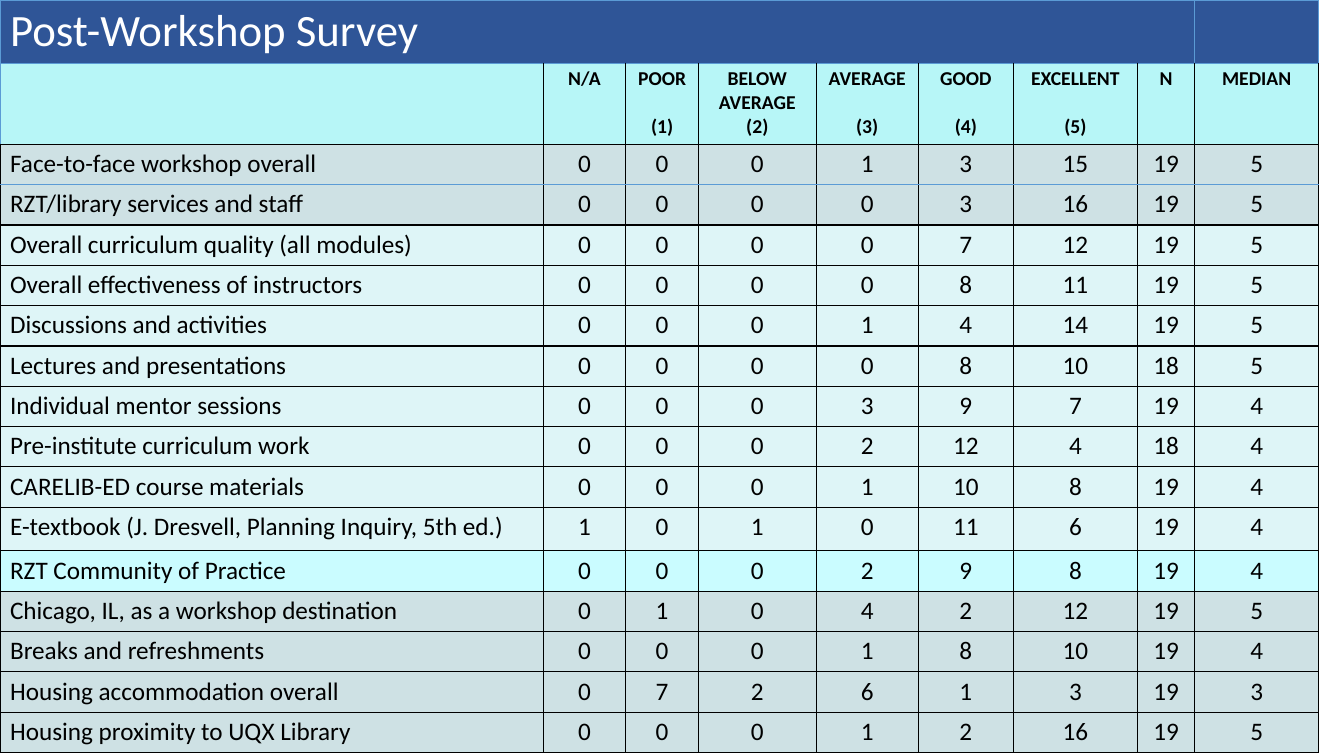
from lxml import etree
from pptx import Presentation
from pptx.dml.color import RGBColor
from pptx.enum.text import MSO_ANCHOR, PP_ALIGN
from pptx.oxml.ns import qn
from pptx.util import Pt

LEFT, CENTER, TOP = PP_ALIGN.LEFT, PP_ALIGN.CENTER, MSO_ANCHOR.TOP
BLACK = RGBColor(0x00, 0x00, 0x00)
WHITE = RGBColor(0xFF, 0xFF, 0xFF)
NAVY = RGBColor(0x2F, 0x55, 0x97)
BLUE = RGBColor(0x5B, 0x9B, 0xD5)
AQUA = RGBColor(0xB7, 0xF6, 0xF7)
GRAY = RGBColor(0xCE, 0xE1, 0xE4)
PALE = RGBColor(0xDE, 0xF5, 0xF7)
CYAN = RGBColor(0xCA, 0xFC, 0xFF)

COLUMN_WIDTHS = [388, 59, 52, 84, 73, 68, 88.5, 41, 88.5]
TITLE_HEIGHT, HEADER_HEIGHT, ROW_HEIGHT, TEXTBOOK_HEIGHT = 45, 58, 28.8, 31.2
HEADERS = [[], ["N/A"], ["POOR", "(1)"], ["BELOW AVERAGE", "(2)"],
           ["AVERAGE", "(3)"], ["GOOD", "(4)"], ["EXCELLENT", "(5)"],
           ["N"], ["MEDIAN"]]
RATINGS = [
    (GRAY, "Face-to-face workshop overall", 0, 0, 0, 1, 3, 15, 19, 5),
    (GRAY, "RZT/library services and staff", 0, 0, 0, 0, 3, 16, 19, 5),
    (PALE, "Overall curriculum quality (all modules)", 0, 0, 0, 0, 7, 12, 19, 5),
    (PALE, "Overall effectiveness of instructors", 0, 0, 0, 0, 8, 11, 19, 5),
    (PALE, "Discussions and activities", 0, 0, 0, 1, 4, 14, 19, 5),
    (PALE, "Lectures and presentations", 0, 0, 0, 0, 8, 10, 18, 5),
    (PALE, "Individual mentor sessions", 0, 0, 0, 3, 9, 7, 19, 4),
    (PALE, "Pre-institute curriculum work", 0, 0, 0, 2, 12, 4, 18, 4),
    (PALE, "CARELIB-ED course materials", 0, 0, 0, 1, 10, 8, 19, 4),
    (PALE, "E-textbook (J. Dresvell, Planning Inquiry, 5th ed.)",
     1, 0, 1, 0, 11, 6, 19, 4),
    (CYAN, "RZT Community of Practice", 0, 0, 0, 2, 9, 8, 19, 4),
    (GRAY, "Chicago, IL, as a workshop destination", 0, 1, 0, 4, 2, 12, 19, 5),
    (GRAY, "Breaks and refreshments", 0, 0, 0, 1, 8, 10, 19, 4),
    (GRAY, "Housing accommodation overall", 0, 7, 2, 6, 1, 3, 19, 3),
    (GRAY, "Housing proximity to UQX Library", 0, 0, 0, 1, 2, 16, 19, 5),
]


def horizontal_edge(row):
    """Return the colour of the line above the given row."""
    return BLUE if row in (0, 1, 3) else BLACK


def vertical_edge(row, col):
    """Return the colour of the line left of the given column, or None."""
    if row == 0:
        return BLUE if col in (0, 8, 9) else None
    return BLUE if (row, col) == (1, 0) else BLACK


class SurveySlide:
    """Hold the text style and the slide that elements are added to."""

    font = "Calibri"
    margin = Pt(3)

    def __init__(self, prs):
        """Add a blank slide."""
        self.s = prs.slides.add_slide(prs.slide_layouts[6])

    def table(self, widths, heights):
        """Add an unstyled table at the top left corner."""
        table = self.s.shapes.add_table(
            len(heights), len(widths), 0, 0,
            Pt(sum(widths)), Pt(sum(heights))).table
        table.first_row = table.horz_banding = False
        for column, width in zip(table.columns, widths):
            column.width = Pt(width)
        for row, height in zip(table.rows, heights):
            row.height = Pt(height)
        return table

    def border(self, cell, tag, color):
        """Add one side line to a cell."""
        ln = etree.SubElement(cell._tc.get_or_add_tcPr(), qn(tag), w=str(Pt(1)))
        if color is None:
            etree.SubElement(ln, qn("a:noFill"))
        else:
            fill = etree.SubElement(ln, qn("a:solidFill"))
            etree.SubElement(fill, qn("a:srgbClr"), val=str(color))

    def cell(self, table, row, col, lines, fill, size, color=BLACK, bold=False):
        """Give a cell its borders, fill and lines of text."""
        cell = table.cell(row, col)
        self.border(cell, "a:lnL", vertical_edge(row, col))
        self.border(cell, "a:lnR", vertical_edge(row, col + 1))
        self.border(cell, "a:lnT", horizontal_edge(row))
        self.border(cell, "a:lnB", horizontal_edge(row + 1))
        cell.fill.solid()
        cell.fill.fore_color.rgb = fill
        cell.margin_top = cell.margin_bottom = self.margin
        cell.vertical_anchor = TOP
        cell.text = "\n".join(lines)
        for p in cell.text_frame.paragraphs:
            p.alignment = CENTER if col else LEFT
            p.font.name = self.font
            p.font.size = Pt(size)
            p.font.bold = bold
            p.font.color.rgb = color
        return cell


def main():
    """Build the survey slide and save it."""
    prs = Presentation()
    prs.slide_width, prs.slide_height = Pt(960), Pt(540)
    slide = SurveySlide(prs)
    heights = [TITLE_HEIGHT, HEADER_HEIGHT] + [
        TEXTBOOK_HEIGHT if label.startswith("E-textbook") else ROW_HEIGHT
        for _, label, *_ in RATINGS]
    table = slide.table(COLUMN_WIDTHS, heights)

    for col, lines in enumerate(HEADERS):
        title = ["Post-Workshop Survey"] if col == 0 else []
        slide.cell(table, 0, col, title, NAVY, 32, WHITE)
        header = slide.cell(table, 1, col, lines, AQUA, 14, bold=True)
        if len(lines) == 2 and " " not in lines[0]:
            header.text_frame.paragraphs[1].space_before = Pt(17)
    table.cell(0, 0).merge(table.cell(0, 6))

    for row, (fill, *values) in enumerate(RATINGS, start=2):
        for col, value in enumerate(values):
            slide.cell(table, row, col, [str(value)], fill, 18)
    prs.save("out.pptx")


if __name__ == "__main__":
    main()
